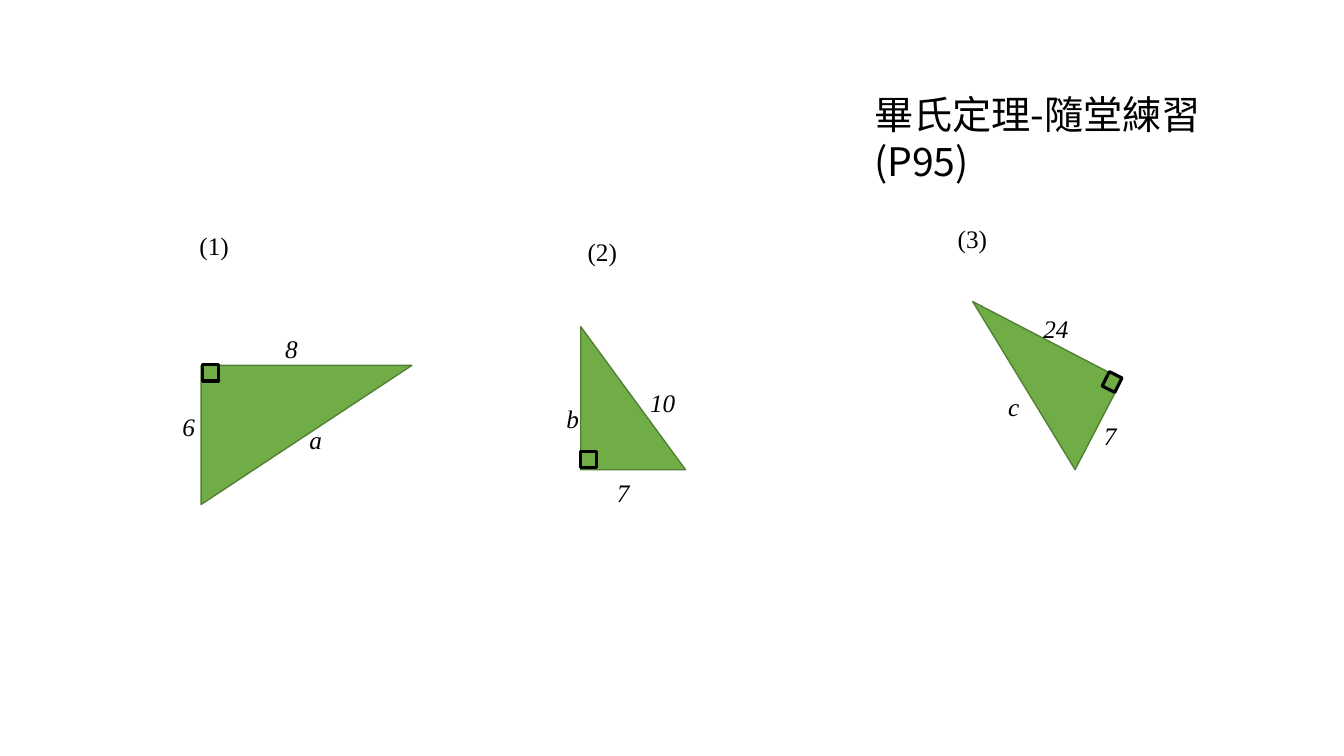
from pptx import Presentation
from pptx.dml.color import RGBColor
from pptx.enum import shapes, text
from pptx.oxml.ns import qn
from pptx.util import Inches, Pt
from lxml import etree

# Content: boxes are left, top, width, height in inches
TITLE = "畢氏定理-隨堂練習(P95)"
TITLE_BOX = (8.57, 0.85, 4.52, 0.57)
COLORS = {"ink": "000000", "leaf": "70AD47", "edge": "538035"}
FONTS = {"title": "Noto Sans CJK SC", "label": "Times New Roman"}
LABEL_H = 0.4

# Each problem: number, triangle, right-angle mark, side labels
PROBLEMS = [
    {"number": ("(1)", 1.88, 2.24, 0.5),
     "triangle": (2.35, 3.27, 1.38, 2.09, 90),
     "corner": (2.01, 3.62, 0.16, 0.16, 0),
     "sides": [("a", 2.97, 4.16, 0.33), ("6", 1.71, 4.03, 0.33),
               ("8", 2.73, 3.26, 0.33)]},
    {"number": ("(2)", 5.73, 2.3, 0.5),
     "triangle": (5.76, 3.24, 1.04, 1.42, 0),
     "corner": (5.76, 4.48, 0.16, 0.16, 0),
     "sides": [("10", 6.35, 3.79, 0.45), ("7", 6.02, 4.69, 0.33),
               ("b", 5.52, 3.95, 0.33)]},
    {"number": ("(3)", 9.4, 2.17, 0.5),
     "triangle": (9.32, 3.32, 1.67, 1.01, 207.5),
     "corner": (10.96, 3.71, 0.14, 0.16, 26.4),
     "sides": [("c", 9.9, 3.83, 0.31), ("24", 10.25, 3.06, 0.56),
               ("7", 10.85, 4.12, 0.56)]},
]


def color(name):
    return RGBColor.from_string(COLORS[name])


def style(run, **form):
    for key, value in form.items():
        setattr(run.font, key, value)
    run.font.color.rgb = color("ink")


def draw(slide, kind, place, edge, width, fill=None):
    *box, turn = place
    shape = slide.shapes.add_shape(kind, *map(Inches, box))
    shape.rotation = turn
    shape.shadow.inherit = False
    if fill:
        shape.fill.solid()
        shape.fill.fore_color.rgb = color(fill)
    else:
        shape.fill.background()
    shape.line.color.rgb = color(edge)
    shape.line.width = Pt(width)


def label(slide, item, italic):
    words, left, top, width = item
    box = slide.shapes.add_textbox(*map(Inches, (left, top, width, LABEL_H)))
    box.text_frame.word_wrap = italic and width > 0.5
    run = box.text_frame.paragraphs[0].add_run()
    run.text = words
    style(run, name=FONTS["label"], size=Pt(18), italic=italic)


def head(slide):
    title = slide.shapes.title
    for key, value in zip(("left", "top", "width", "height"), TITLE_BOX):
        setattr(title, key, Inches(value))
    frame = title.text_frame
    form = {"word_wrap": True, "auto_size": text.MSO_AUTO_SIZE.NONE,
            "vertical_anchor": text.MSO_ANCHOR.TOP, "margin_right": Inches(0.3)}
    for key, value in form.items():
        setattr(frame, key, value)
    para = frame.paragraphs[0]
    para.alignment = text.PP_ALIGN.LEFT
    run = para.add_run()
    run.text = TITLE
    style(run, name=FONTS["title"], size=Pt(28))
    # East Asian font for the Chinese text
    asian = etree.SubElement(run.font._element, qn("a:ea"))
    asian.set("typeface", FONTS["title"])


def main():
    deck = Presentation()
    deck.slide_width, deck.slide_height = Inches(13.33), Inches(7.5)
    slide = deck.slides.add_slide(deck.slide_layouts[5])
    head(slide)

    # Triangles, then labels, then right-angle marks on top
    kinds = shapes.MSO_SHAPE
    for item in PROBLEMS:
        draw(slide, kinds.RIGHT_TRIANGLE, item["triangle"], "edge", 1, "leaf")
    for item in PROBLEMS:
        for side in item["sides"]:
            label(slide, side, True)
    for item in PROBLEMS:
        label(slide, item["number"], False)
    for item in PROBLEMS:
        draw(slide, kinds.RECTANGLE, item["corner"], "ink", 2.25)
    deck.save("out.pptx")


if __name__ == "__main__":
    main()
